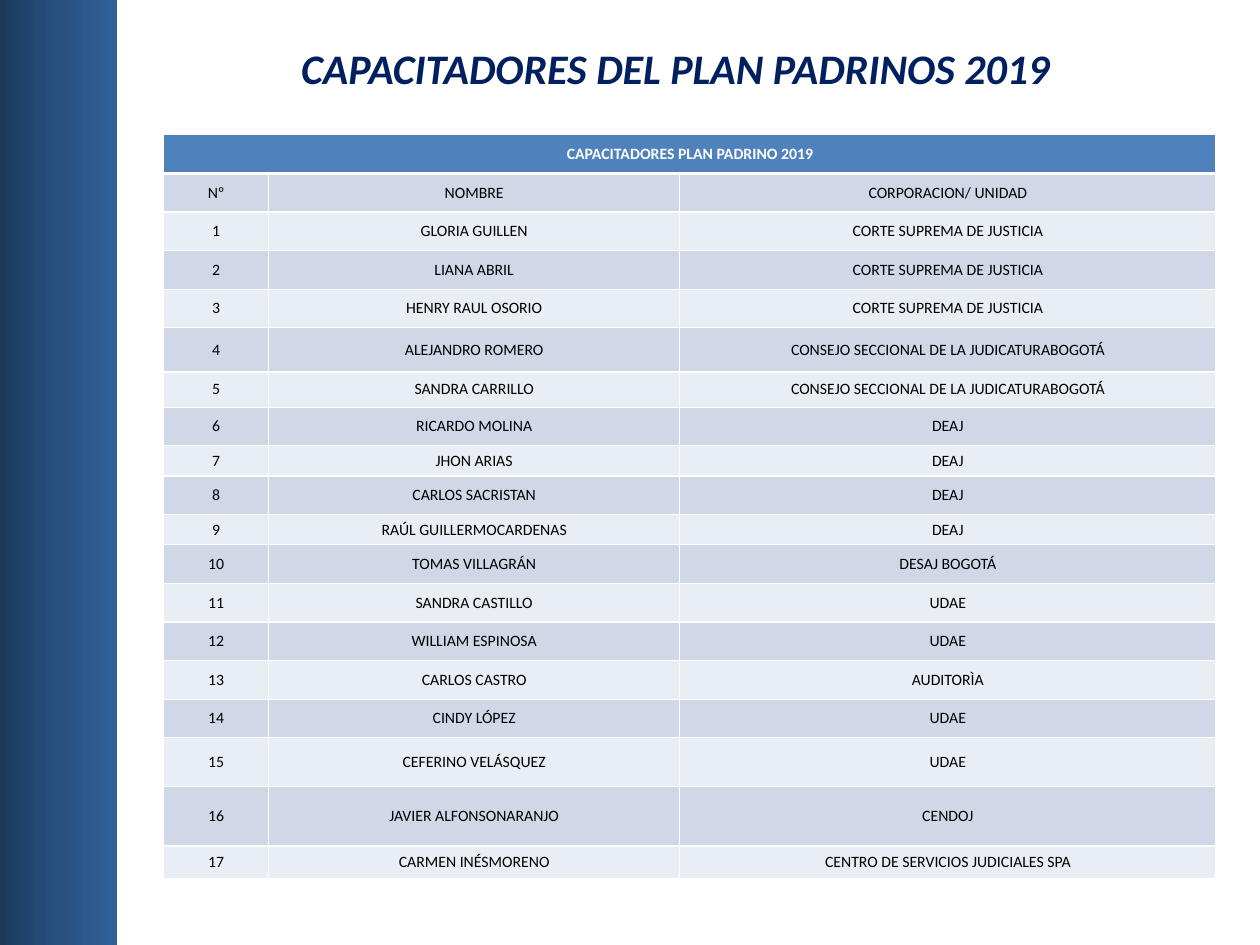
import copy

import lxml.etree
import pptx
import pptx.dml.color
import pptx.enum.shapes
import pptx.enum.text
import pptx.oxml.ns
import pptx.util
from pptx.util import Inches

FONT = "Calibri"
THIN, THICK = 0.79, 2.36

TABLE_HEADING = "CAPACITADORES PLAN PADRINO 2019"
COLUMN_HEADINGS = ("Nº", "NOMBRE", "CORPORACION/ UNIDAD")
TRAINERS = [
    ("GLORIA GUILLEN", "CORTE SUPREMA DE JUSTICIA"),
    ("LIANA ABRIL", "CORTE SUPREMA DE JUSTICIA"),
    ("HENRY RAUL OSORIO", "CORTE SUPREMA DE JUSTICIA"),
    ("ALEJANDRO ROMERO", "CONSEJO SECCIONAL DE LA JUDICATURABOGOTÁ"),
    ("SANDRA CARRILLO", "CONSEJO SECCIONAL DE LA JUDICATURABOGOTÁ"),
    ("RICARDO MOLINA", "DEAJ"),
    ("JHON ARIAS", "DEAJ"),
    ("CARLOS SACRISTAN", "DEAJ"),
    ("RAÚL GUILLERMOCARDENAS", "DEAJ"),
    ("TOMAS VILLAGRÁN", "DESAJ BOGOTÁ"),
    ("SANDRA CASTILLO", "UDAE"),
    ("WILLIAM ESPINOSA", "UDAE"),
    ("CARLOS CASTRO", "AUDITORÌA"),
    ("CINDY LÓPEZ", "UDAE"),
    ("CEFERINO VELÁSQUEZ", "UDAE"),
    ("JAVIER ALFONSONARANJO", "CENDOJ"),
    ("CARMEN INÉSMORENO", "CENTRO DE SERVICIOS JUDICIALES SPA"),
]
COLUMN_WIDTHS = (0.83, 3.26, 4.25)
# Heights of the rows that differ, by row index; the others share the rest.
SPECIAL_HEIGHTS = {5: 0.35, 6: 0.28, 8: 0.24, 10: 0.24, 16: 0.39, 17: 0.47, 18: 0.26}


def color(hex_value):
    return pptx.dml.color.RGBColor.from_string(hex_value)


def set_font(paragraph, size, hex_value, bold=False, italic=False):
    font = paragraph.font
    font.name = FONT
    font.size = pptx.util.Pt(size)
    font.bold = bold
    font.italic = italic
    font.color.rgb = color(hex_value)


def add_sidebar(slide, left, top, width, height):
    sidebar = slide.shapes.add_shape(
        pptx.enum.shapes.MSO_SHAPE.RECTANGLE, left, top, width, height)
    sidebar.shadow.inherit = False
    sidebar.line.fill.background()
    sidebar.fill.gradient()
    sidebar.fill.gradient_angle = 0
    stop_list = next(sidebar.element.iter(pptx.oxml.ns.qn("a:gsLst")))
    stop_list.append(copy.deepcopy(stop_list[0]))
    shades = ((0, "1C395B"), (0.5, "285181"), (1, "306099"))
    for stop, (position, shade) in zip(sidebar.fill.gradient_stops, shades):
        stop.position = position
        stop.color.rgb = color(shade)


def place_title(slide, left, top, width, height):
    title = slide.shapes.title
    title.left, title.top, title.width, title.height = left, top, width, height
    frame = title.text_frame
    frame.text = "CAPACITADORES DEL PLAN PADRINOS 2019"
    frame.word_wrap = True
    frame.auto_size = pptx.enum.text.MSO_AUTO_SIZE.NONE
    frame.vertical_anchor = pptx.enum.text.MSO_ANCHOR.TOP
    frame.margin_left = Inches(0.18)
    frame.margin_right = 0
    frame.paragraphs[0].alignment = pptx.enum.text.PP_ALIGN.LEFT
    set_font(frame.paragraphs[0], 24, "002060", bold=True, italic=True)


def set_borders(cell, top=THIN, bottom=THIN):
    """Draw white lines, with widths in points, round a cell."""
    qn = pptx.oxml.ns.qn
    properties = cell._tc.get_or_add_tcPr()
    widths = {"a:lnL": THIN, "a:lnR": THIN, "a:lnT": top, "a:lnB": bottom}
    for index, (side, width) in enumerate(widths.items()):
        line = lxml.etree.Element(qn(side), w=str(pptx.util.Pt(width)))
        fill = lxml.etree.SubElement(line, qn("a:solidFill"))
        lxml.etree.SubElement(fill, qn("a:srgbClr"), val="FFFFFF")
        properties.insert(index, line)


def format_cell(cell, text, row):
    heading = row == 0
    cell.text = text
    cell.vertical_anchor = pptx.enum.text.MSO_ANCHOR.MIDDLE
    cell.margin_left = cell.margin_right = Inches(0.05)
    cell.margin_top = cell.margin_bottom = Inches(0.02)
    paragraph = cell.text_frame.paragraphs[0]
    paragraph.alignment = pptx.enum.text.PP_ALIGN.CENTER
    set_font(paragraph, 9, "FFFFFF" if heading else "000000", bold=heading)
    cell.fill.solid()
    band = "D0D8E8" if row % 2 else "E9EDF4"
    cell.fill.fore_color.rgb = color("4F81BD" if heading else band)
    set_borders(cell, top=THICK if row == 1 else THIN,
                bottom=THICK if heading else THIN)


def add_trainer_table(slide, left, top, width, height):
    rows = [(TABLE_HEADING, "", ""), COLUMN_HEADINGS]
    rows += [(str(number), *trainer) for number, trainer in enumerate(TRAINERS, 1)]
    table = slide.shapes.add_table(
        len(rows), len(COLUMN_HEADINGS), left, top, width, height).table
    table.first_row = table.horz_banding = False

    for column, share in zip(table.columns, COLUMN_WIDTHS):
        column.width = int(width * share / sum(COLUMN_WIDTHS))
    special_total = Inches(sum(SPECIAL_HEIGHTS.values()))
    usual_height = (height - special_total) // (len(rows) - len(SPECIAL_HEIGHTS))
    for row, texts in enumerate(rows):
        special = SPECIAL_HEIGHTS.get(row)
        table.rows[row].height = Inches(special) if special else usual_height
        for column, text in enumerate(texts):
            format_cell(table.cell(row, column), text, row)
    table.cell(0, 0).merge(table.cell(0, len(COLUMN_HEADINGS) - 1))


def main():
    presentation = pptx.Presentation()
    presentation.slide_width = Inches(10)
    presentation.slide_height = Inches(7.5)
    slide = presentation.slides.add_slide(presentation.slide_layouts[5])
    add_sidebar(slide, 0, 0, Inches(0.93), presentation.slide_height)
    place_title(slide, Inches(2.21), Inches(0.29), Inches(6.25), Inches(0.62))
    add_trainer_table(slide, Inches(1.3), Inches(1.07), Inches(8.35), Inches(5.91))
    presentation.save("out.pptx")


if __name__ == "__main__":
    main()
